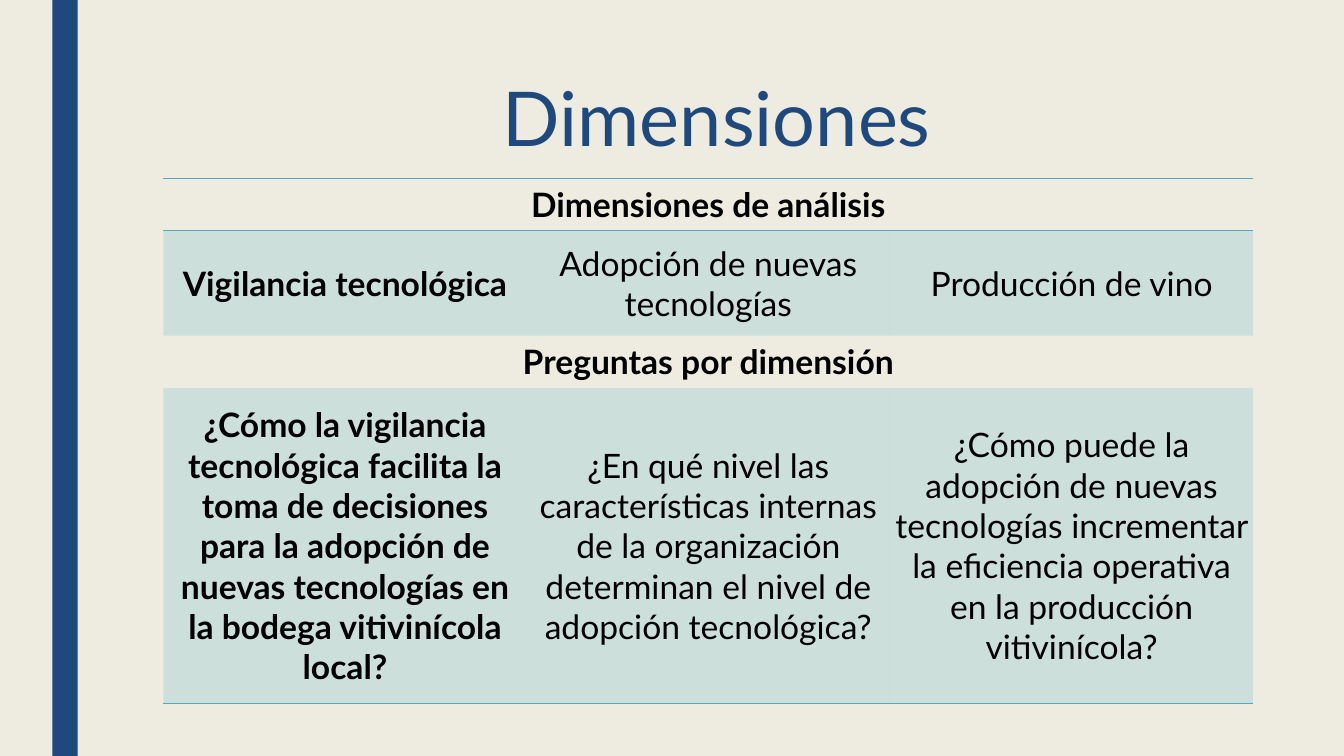
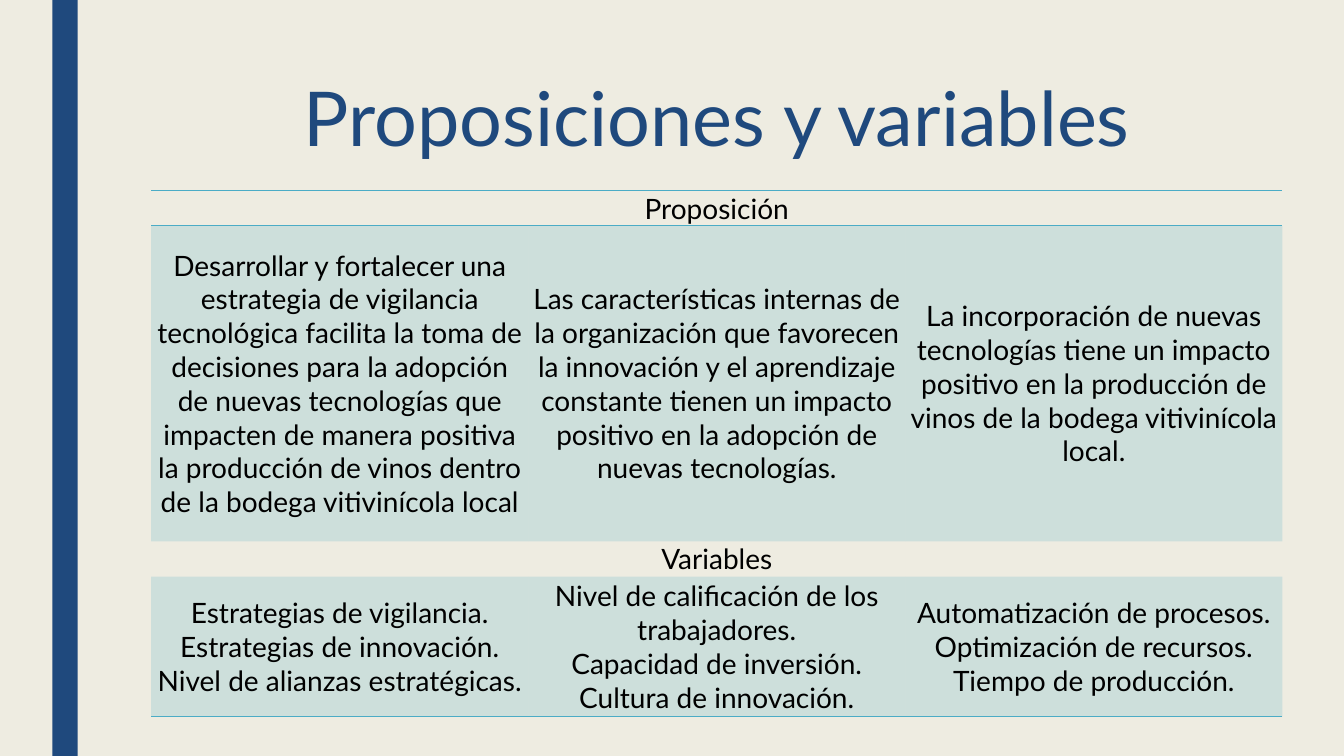
"""Build two slides, each with a title and a three-column table of headings and bodies."""
import pptx
import pptx.dml.color
import pptx.enum.shapes
import pptx.enum.text
import pptx.oxml
import pptx.oxml.ns
import pptx.util

Inches = pptx.util.Inches
Pt = pptx.util.Pt
CENTER = pptx.enum.text.PP_ALIGN.CENTER
MIDDLE = pptx.enum.text.MSO_ANCHOR.MIDDLE

WIDTH, HEIGHT = 13.33, 7.5
FONT = "Lato"
PAPER, NAVY, TEAL, BLACK = "EEECE1", "1F497D", "4BACC6", "000000"
PLAIN_TABLE = "{2D5ABB26-0587-4C30-8999-92F81FD0307C}"
COLUMNS = 3

SLIDES = [
    {
        "title": "Dimensiones",
        "left": 1.62, "top": 1.77, "width": 10.81,
        "heights": [0.52, 1.04, 0.52, 3.13],
        "size": 24, "bold_lead": True,
        "rows": [
            ["Dimensiones de análisis"],
            ["Vigilancia tecnológica", "Adopción de nuevas tecnologías", "Producción de vino"],
            ["Preguntas por dimensión"],
            [
                "¿Cómo la vigilancia tecnológica facilita la toma de decisiones para la "
                "adopción de nuevas tecnologías en la bodega vitivinícola local?",
                "¿En qué nivel las características internas de la organización determinan "
                "el nivel de adopción tecnológica?",
                "¿Cómo puede la adopción de nuevas tecnologías incrementar la eficiencia "
                "operativa en la producción vitivinícola?",
            ],
        ],
    },
    {
        "title": "Proposiciones y variables",
        "left": 1.5, "top": 1.89, "width": 11.22,
        "heights": [0.35, 3.13, 0.35, 1.39],
        "size": 20, "bold_lead": False,
        "rows": [
            ["Proposición"],
            [
                "Desarrollar y fortalecer una estrategia de vigilancia tecnológica facilita "
                "la toma de decisiones para la adopción de nuevas tecnologías que impacten "
                "de manera positiva la producción de vinos dentro de la bodega vitivinícola "
                "local",
                "Las características internas de la organización que favorecen la innovación "
                "y el aprendizaje constante tienen un impacto positivo en la adopción de "
                "nuevas tecnologías.",
                "La incorporación de nuevas tecnologías tiene un impacto positivo en la "
                "producción de vinos de la bodega vitivinícola local.",
            ],
            ["Variables"],
            [
                "Estrategias de vigilancia.\nEstrategias de innovación.\n"
                "Nivel de alianzas estratégicas.",
                "Nivel de calificación de los trabajadores.\nCapacidad de inversión.\n"
                "Cultura de innovación.",
                "Automatización de procesos.\nOptimización de recursos.\n"
                "Tiempo de producción.",
            ],
        ],
    },
]


def color(code):
    return pptx.dml.color.RGBColor.from_string(code)


def write(frame, text, size, ink=BLACK, bold=False, spacing=1.0):
    frame.word_wrap = True
    for index, line in enumerate(text.split("\n")):
        para = frame.add_paragraph() if index else frame.paragraphs[0]
        para.alignment = CENTER
        para.line_spacing = spacing
        para.space_before = para.space_after = Pt(0)
        span = para.add_run()
        span.text = line
        span.font.name = FONT
        span.font.size = Pt(size)
        span.font.bold = bold
        span.font.color.rgb = color(ink)


def add_band(page):
    band = page.shapes.add_shape(
        pptx.enum.shapes.MSO_SHAPE.RECTANGLE, Inches(0.52), 0, Inches(0.25), Inches(HEIGHT))
    band.shadow.inherit = False
    band.fill.solid()
    band.fill.fore_color.rgb = color(NAVY)
    band.line.fill.background()


def add_title(page, text):
    title = page.shapes.title
    title.left, title.top = Inches(1.5), Inches(0.77)
    title.width, title.height = Inches(11.22), Inches(0.86)
    frame = title.text_frame
    frame.auto_size = pptx.enum.text.MSO_AUTO_SIZE.NONE
    frame.vertical_anchor = MIDDLE
    frame.margin_left = frame.margin_right = frame.margin_top = frame.margin_bottom = 0
    write(frame, text, 54, ink=NAVY, spacing=0.94)


def tint(cell):
    cell.fill.solid()
    cell.fill.fore_color.rgb = color(TEAL)
    shade = cell._tc.tcPr.find(".//" + pptx.oxml.ns.qn("a:srgbClr"))
    alpha = shade.makeelement(pptx.oxml.ns.qn("a:alpha"), {"val": "20000"})
    shade.append(alpha)


def rule(cell, sides):
    for position, side in enumerate(sides):
        line = pptx.oxml.parse_xml(
            f'<a:ln{side} {pptx.oxml.ns.nsdecls("a")} w="{Pt(1)}">'
            f'<a:solidFill><a:srgbClr val="{TEAL}"/></a:solidFill></a:ln{side}>')
        cell._tc.get_or_add_tcPr().insert(position, line)


def add_grid(page, content):
    rows, heights = content["rows"], content["heights"]
    frame = page.shapes.add_table(
        len(rows), COLUMNS, Inches(content["left"]), Inches(content["top"]),
        Inches(content["width"]), Inches(sum(heights)))
    table = frame.table
    table.first_row = table.horz_banding = False
    table._tbl.tblPr.find(pptx.oxml.ns.qn("a:tableStyleId")).text = PLAIN_TABLE
    borders = {0: "TB", len(rows) - 1: "B"}
    for index, (texts, height) in enumerate(zip(rows, heights)):
        table.rows[index].height = Inches(height)
        heading = len(texts) == 1
        for column in range(COLUMNS):
            cell = table.cell(index, column)
            cell.margin_left = cell.margin_right = Inches(0.05)
            cell.margin_top = cell.margin_bottom = 0
            cell.vertical_anchor = MIDDLE
            if heading:
                cell.fill.background()
            else:
                tint(cell)
            rule(cell, borders.get(index, ""))
            if column < len(texts):
                write(cell.text_frame, texts[column], content["size"],
                      bold=content["bold_lead"] and column == 0)
        if heading:
            table.cell(index, 0).merge(table.cell(index, COLUMNS - 1))


def main():
    deck = pptx.Presentation()
    deck.slide_width, deck.slide_height = Inches(WIDTH), Inches(HEIGHT)
    backdrop = deck.slide_master.background.fill
    backdrop.solid()
    backdrop.fore_color.rgb = color(PAPER)
    for content in SLIDES:
        page = deck.slides.add_slide(deck.slide_layouts[5])
        add_band(page)
        add_title(page, content["title"])
        add_grid(page, content)
    deck.save("out.pptx")


if __name__ == "__main__":
    main()
